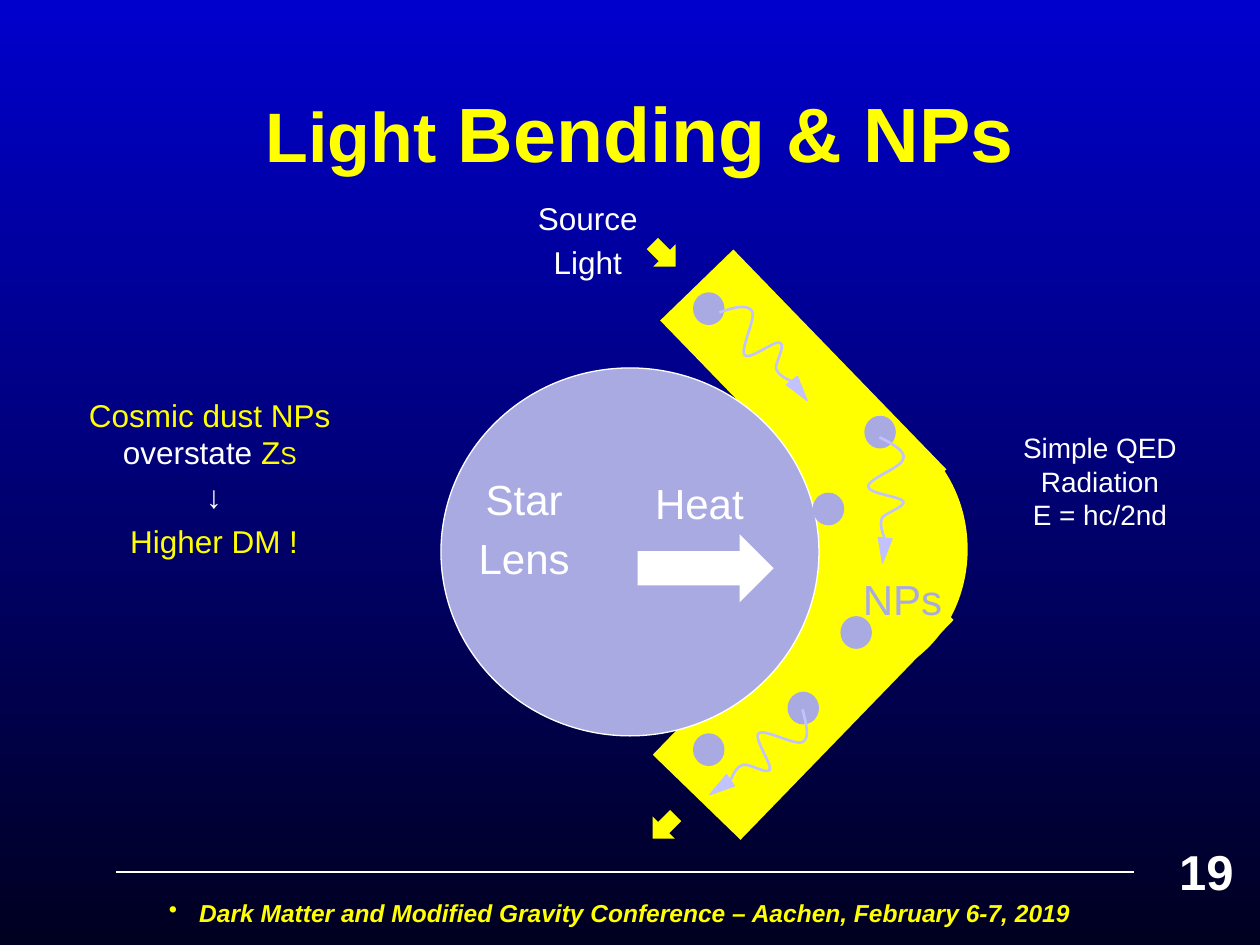
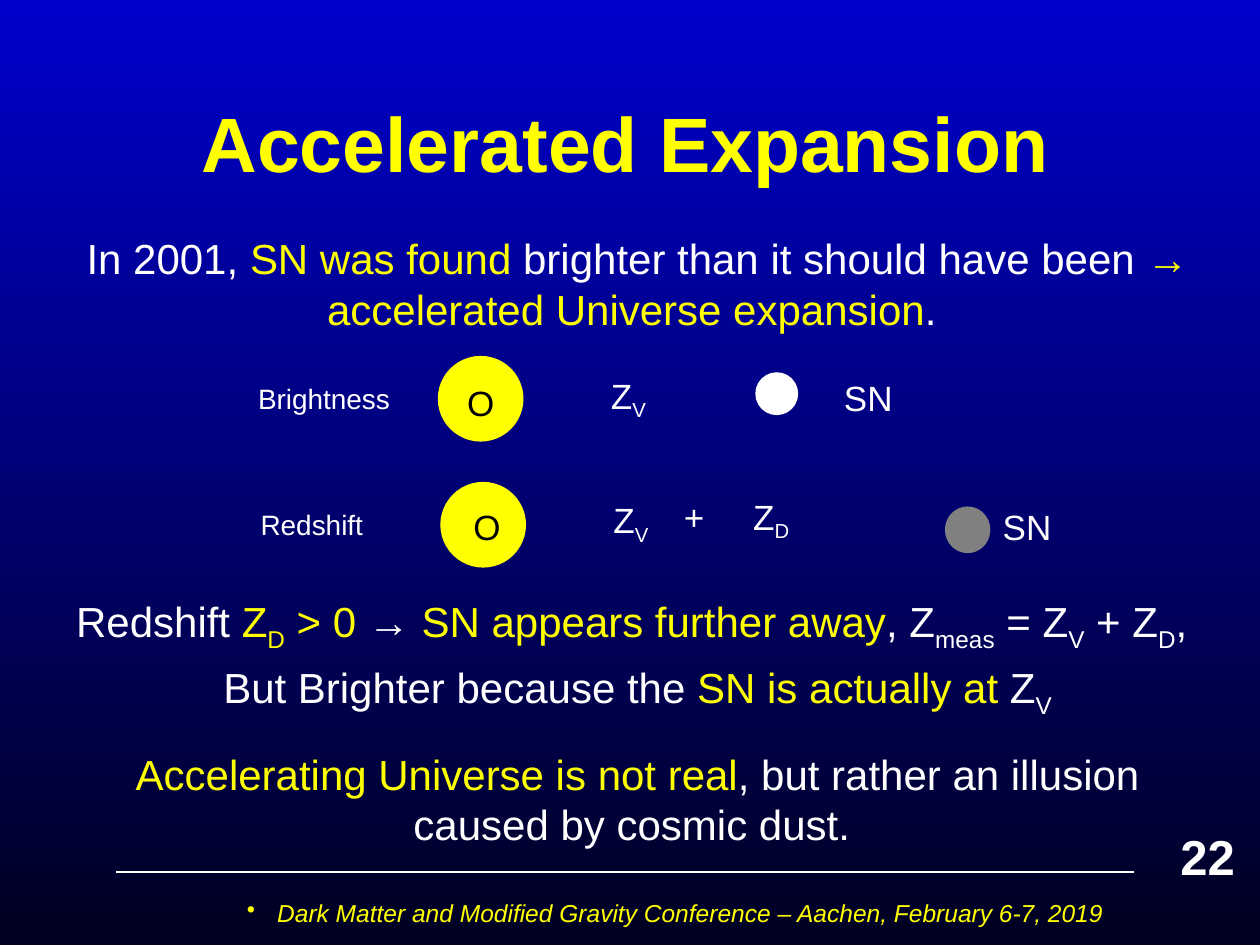
from dataclasses import dataclass

from lxml import etree
from pptx import Presentation
from pptx.dml.color import RGBColor
from pptx.enum.shapes import MSO_CONNECTOR, MSO_SHAPE
from pptx.enum.text import MSO_ANCHOR, PP_ALIGN
from pptx.oxml.ns import qn
from pptx.util import Inches, Pt

LEFT, CENTER = PP_ALIGN.LEFT, PP_ALIGN.CENTER
TOP, MIDDLE = MSO_ANCHOR.TOP, MSO_ANCHOR.MIDDLE
OVAL, RECT = MSO_SHAPE.OVAL, MSO_SHAPE.RECTANGLE
ARROW, TRIANGLE = MSO_SHAPE.RIGHT_ARROW, MSO_SHAPE.ISOSCELES_TRIANGLE
STRAIGHT = MSO_CONNECTOR.STRAIGHT


@dataclass(frozen=True)
class Theme:
    font: str = "Arial"
    sky: str = "0000CC"
    night: str = "000021"
    yellow: str = "FFFF00"
    white: str = "FFFFFF"
    black: str = "000000"
    gray: str = "808080"
    lilac: str = "AAAAE2"
    wave: str = "C2C2FF"
    title: int = 44
    title_small: int = 40
    number: int = 28
    body: int = 24
    symbol: int = 20
    label: int = 18
    caption: int = 16
    footer: int = 14


@dataclass(frozen=True)
class Run:
    text: str
    color: str
    size: int = 0
    subscript: bool = False


THEME = Theme()
CONFERENCE = "Dark Matter and Modified Gravity Conference – Aachen, February 6-7, 2019"


def white(text):
    return Run(text, THEME.white)


def yellow(text):
    return Run(text, THEME.yellow)


def sub(text, color=THEME.white):
    return Run(text, color, subscript=True)


class Deck:
    def __init__(self, theme):
        self.theme = theme
        self.presentation = Presentation()
        self.presentation.slide_width = Inches(10)
        self.presentation.slide_height = Inches(7.5)
        self.slide = None

    def new_slide(self):
        self.slide = self.presentation.slides.add_slide(self.presentation.slide_layouts[6])
        backdrop = self.slide.background.fill
        backdrop.gradient()
        backdrop.gradient_angle = 270
        for stop, color in zip(backdrop.gradient_stops, (self.theme.sky, self.theme.night)):
            stop.color.rgb = RGBColor.from_string(color)
        self.rule((0.92, 6.92), (9, 6.92))

    def rule(self, start, end):
        rule = self.slide.shapes.add_connector(STRAIGHT, *map(Inches, start + end))
        self.outline(rule, self.theme.white, 0.75)
        etree.SubElement(rule._element.spPr, qn("a:effectLst"))

    def outline(self, shape, color, width):
        shape.line.color.rgb = RGBColor.from_string(color)
        shape.line.width = Pt(width)

    def shape(self, kind, box, fill, line=None, rotation=0):
        shape = self.slide.shapes.add_shape(kind, *map(Inches, box))
        shape.shadow.inherit = False
        shape.rotation = rotation
        shape.fill.solid()
        shape.fill.fore_color.rgb = RGBColor.from_string(fill)
        if line:
            self.outline(shape, line, 0.75)
        else:
            shape.line.fill.background()

    def text(self, box, paragraphs, size, align=CENTER, anchor=TOP, spacing=0.2, **formats):
        frame = self.slide.shapes.add_textbox(*map(Inches, box)).text_frame
        frame.word_wrap = True
        frame.vertical_anchor = anchor
        for index, runs in enumerate(paragraphs):
            paragraph = frame.add_paragraph() if index else frame.paragraphs[0]
            paragraph.alignment = align
            paragraph.space_before = Pt(spacing * size if index else 0)
            for part in runs:
                run = paragraph.add_run()
                run.text = part.text
                style = {"name": self.theme.font, "size": Pt(part.size or size), **formats}
                for key, value in style.items():
                    setattr(run.font, key, value)
                run.font.color.rgb = RGBColor.from_string(part.color)
                if part.subscript:
                    run.font._element.set("baseline", "-25000")
        return frame

    def title(self, left, top, runs):
        self.text((left, top, 8.5, 1.25), [runs], self.theme.title, anchor=MIDDLE, bold=True)

    def footer(self, left, width, bold):
        frame = self.text((left, 7.08, width, 0.42), [[yellow(CONFERENCE)]],
                          self.theme.footer, bold=bold, italic=True)
        properties = frame.paragraphs[0]._p.get_or_add_pPr()
        hanging = Inches(0.24)
        properties.set("marL", str(hanging))
        properties.set("indent", str(-hanging))
        etree.SubElement(properties, qn("a:buChar")).set("char", "•")

    def number(self, left, top, value):
        self.text((left, top, 0.73, 0.57), [[white(value)]], self.theme.number, LEFT, bold=True)

    def wave(self, points, tip, rotation):
        start, *controls = [(Inches(x), Inches(y)) for x, y in points]
        builder = self.slide.shapes.build_freeform(*start)
        builder.add_line_segments(controls, close=False)
        ray = builder.convert_to_shape()
        ray.shadow.inherit = False
        ray.fill.background()
        self.outline(ray, self.theme.wave, 1.5)
        outline = ray._element.find(".//" + qn("a:path"))
        segments = iter(outline.findall(qn("a:lnTo")))
        for triple in zip(segments, segments, segments):
            curve = etree.SubElement(outline, qn("a:cubicBezTo"))
            for segment in triple:
                curve.append(segment[0])
                outline.remove(segment)
        self.shape(TRIANGLE, (*tip, 0.11, 0.2), self.theme.wave, self.theme.wave, rotation)


def light_bending(deck):
    t = deck.theme
    deck.new_slide()
    deck.title(0.83, 0.42, [Run("Light", t.yellow, t.title_small), yellow(" Bending & NPs")])
    deck.footer(0.67, 8.5, True)
    deck.number(9.26, 6.63, "19")

    deck.shape(OVAL, (5.83, 3.32, 1.85, 2.08), t.yellow)
    deck.shape(RECT, (5.16, 4.97, 2.43, 0.97), t.yellow, rotation=314.1)
    deck.shape(RECT, (5.16, 2.73, 2.43, 0.81), t.yellow, rotation=45.9)
    deck.shape(OVAL, (3.5, 2.92, 3, 2.92), t.lilac, t.white)
    for top, rotation in ((1.9, 45), (6.44, 135)):
        deck.shape(ARROW, (5.14, top, 0.26, 0.25), t.yellow, rotation=rotation)
    deck.shape(ARROW, (5.06, 4.24, 1.08, 0.54), t.white)

    particles = [(5.5, 2.32), (6.86, 3.3), (6.45, 3.91), (6.67, 4.89), (6.25, 5.49), (5.5, 5.82)]
    for particle in particles:
        deck.shape(OVAL, (*particle, 0.25, 0.26), t.lilac)

    deck.text((3.62, 3.71, 1.08, 0.99), [[white("Star")], [white("Lens")]], t.body)
    deck.text((5.1, 3.74, 1.08, 0.5), [[white("Heat")]], t.body, LEFT)
    deck.text((6.75, 4.5, 1.08, 0.5), [[Run("NPs", t.lilac)]], t.body, LEFT)
    deck.text((3.99, 1.53, 1.35, 0.77), [[white("Source")], [white("Light")]], t.label)
    deck.text((0.25, 3.09, 2.83, 1.43), [
        [yellow("Cosmic dust NPs "), white("overstate "), yellow("Z"),
         Run("S", t.yellow, t.footer)],
        [white(" ↓")],
        [yellow(" Higher DM !")],
    ], t.label)
    radiation = ["Simple QED", "Radiation", "E = hc/2nd"]
    deck.text((8, 3.37, 1.46, 0.91), [[white(line)] for line in radiation], t.caption, spacing=0)

    deck.wave([(6.37, 5.63), (6.4, 5.75), (6.43, 5.86), (6.37, 5.89),
               (6.31, 5.92), (6.06, 5.78), (6.02, 5.82),
               (5.98, 5.86), (6.13, 6.07), (6.11, 6.11),
               (6.09, 6.15), (5.95, 6.06), (5.9, 6.07),
               (5.85, 6.08), (5.82, 6.14), (5.8, 6.19)], (5.66, 6.15), 235.1)
    deck.wave([(6.98, 3.47), (7.08, 3.52), (7.19, 3.58), (7.17, 3.64),
               (7.16, 3.71), (6.89, 3.8), (6.89, 3.86),
               (6.89, 3.92), (7.15, 3.94), (7.17, 3.98),
               (7.19, 4.02), (7.03, 4.07), (7, 4.11),
               (6.98, 4.16), (7, 4.22), (7.02, 4.27)], (6.96, 4.27), 186)
    deck.wave([(5.71, 2.48), (5.82, 2.44), (5.93, 2.41), (5.97, 2.47),
               (6, 2.53), (5.87, 2.78), (5.91, 2.82),
               (5.95, 2.86), (6.15, 2.7), (6.19, 2.72),
               (6.24, 2.74), (6.15, 2.88), (6.16, 2.93),
               (6.18, 2.98), (6.23, 3), (6.29, 3.03)], (6.29, 3), 142.7)


def accelerated_expansion(deck):
    t = deck.theme
    deck.new_slide()
    deck.title(0.8, 0.5, [yellow("Accelerated Expansion ")])
    deck.footer(0.75, 9.22, False)
    deck.number(9.27, 6.51, "22")

    statements = [
        (1.8, [[white("In 2001, "), yellow("SN was found "),
                white("brighter than it should have been "),
                yellow("→ accelerated Universe expansion"), white(". ")]]),
        (4.68, [[white("Redshift "), yellow("Z"), sub("D", t.yellow), yellow(" > 0 "),
                 white("→"), yellow(" SN appears further away"), white(", Z"), sub("meas"),
                 white(" = Z"), sub("V"), white(" + Z"), sub("D"), white(", ")],
                [white("But Brighter because the "), yellow("SN is actually at "),
                 white("Z"), sub("V")]]),
        (5.89, [[yellow("Accelerating Universe is not real"),
                 white(", but rather an illusion caused by cosmic dust. ")]]),
    ]
    for top, paragraphs in statements:
        deck.text((0.42, top, 9.28, 0.9), paragraphs, t.body)

    observers = [(3.48, 2.83), (3.5, 3.83)]
    for observer in observers:
        deck.shape(OVAL, (*observer, 0.67, 0.67), t.yellow, t.yellow)
    deck.shape(OVAL, (6, 2.96, 0.33, 0.33), t.white, t.white)
    deck.shape(OVAL, (7.5, 4.02, 0.36, 0.37), t.gray)

    for left, top, name in ((1.95, 2.98, "Brightness"), (1.97, 3.98, "Redshift")):
        deck.text((left, top, 1.53, 0.37), [[white(name)]], t.caption, LEFT)
    observer_mark, supernova = [Run("O", t.black)], [white("SN")]
    symbols = [
        (3.61, 2.98, observer_mark),
        (4.75, 2.92, [white("Z"), sub("V")]),
        (6.6, 2.94, supernova),
        (3.66, 3.96, observer_mark),
        (4.77, 3.91, [white("Z"), sub("V")]),
        (5.33, 3.88, [white("+")]),
        (5.88, 3.88, [white("Z"), sub("D")]),
        (7.86, 3.96, supernova),
    ]
    for left, top, runs in symbols:
        deck.text((left, top, 0.74, 0.44), [runs], t.symbol, LEFT)


def main():
    deck = Deck(THEME)
    light_bending(deck)
    accelerated_expansion(deck)
    deck.presentation.save("out.pptx")


if __name__ == "__main__":
    main()
